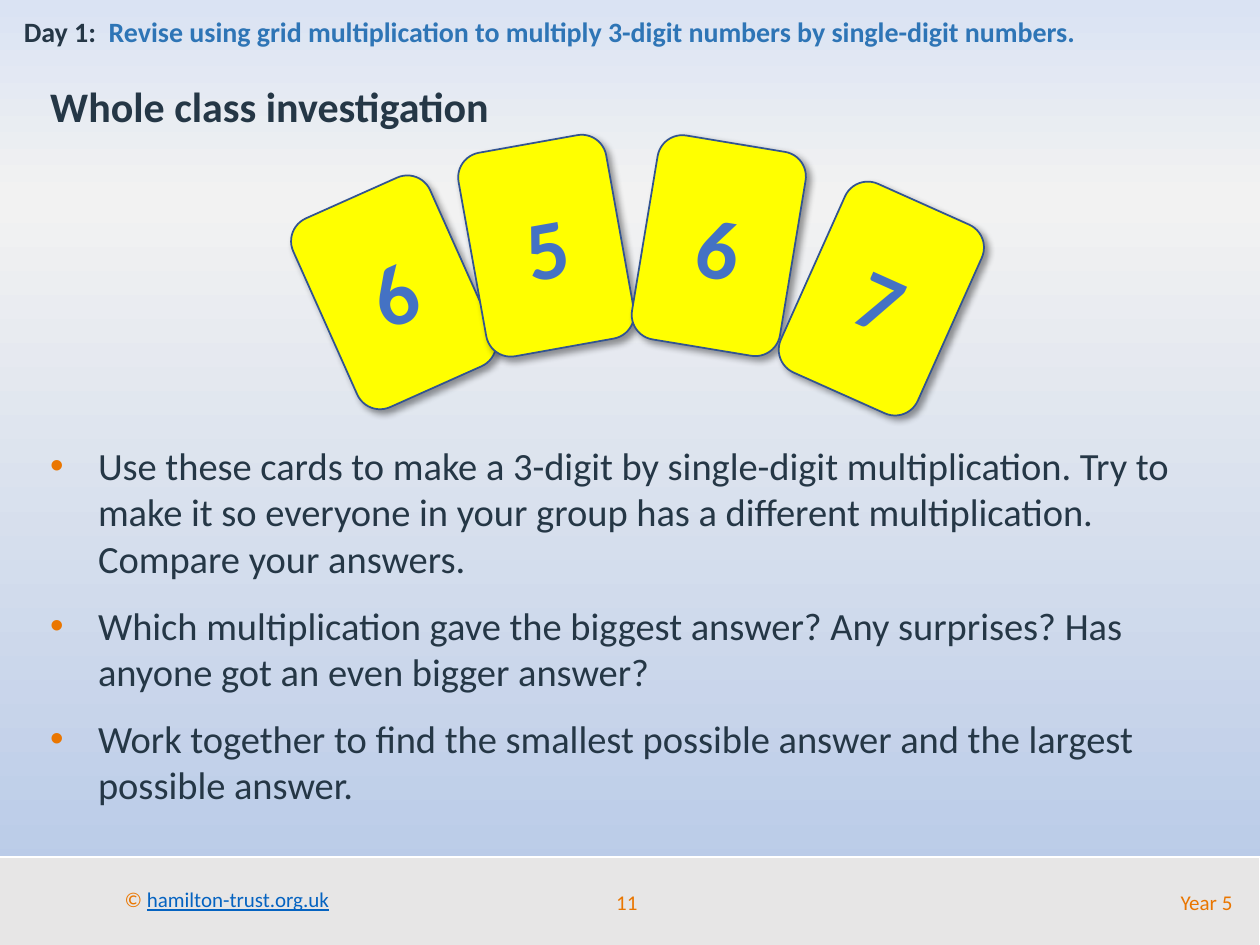
from copy import deepcopy

from lxml.etree import SubElement
from pptx import Presentation
from pptx.dml.color import RGBColor
from pptx.enum.shapes import MSO_SHAPE as Shape
from pptx.enum.text import MSO_ANCHOR as Anchor, PP_ALIGN as Align
from pptx.oxml.ns import qn
from pptx.util import Inches, Pt

FONT = "Calibri"
COLOURS = {
    "sky": "DAE3F3",
    "mist": "F2F2F2",
    "dusk": "B4C7E7",
    "footer": "E7E6E6",
    "white": "FFFFFF",
    "orange": "EA7600",
    "link": "0563C1",
    "ink": "253746",
    "objective": "2E75B6",
    "card": "FFFF00",
    "card_edge": "325491",
    "digit": "4472C4",
    "shadow": "000000",
}
BACKGROUND = [(0, "sky"), (0.21, "mist"), (1, "dusk")]
CARD_SIZE = (1.19, 1.64)
CARDS = [
    ("6", 2.53, 1.5, 335.9),
    ("5", 3.74, 1.13, 349.8),
    ("6", 5.11, 1.13, 9.4),
    ("7", 6.4, 1.55, 24.1),
]
TASKS = [
    "Use these cards to make a 3-digit by single-digit multiplication. "
    "Try to make it so everyone in your group has a different multiplication. "
    "Compare your answers.",
    "Which multiplication gave the biggest answer? Any surprises? "
    "Has anyone got an even bigger answer?",
    "Work together to find the smallest possible answer and the largest possible answer.",
]


def colour(name):
    return RGBColor.from_string(COLOURS[name])


def add_span(para, text, size, tint, bold=False, underline=None):
    span = para.add_run()
    span.text = text
    font = span.font
    font.name = FONT
    font.size = Pt(size)
    font.bold = bold
    font.underline = underline
    font.color.rgb = colour(tint)


def add_text_box(page, bounds, anchor=Anchor.TOP, wrap=True):
    frame = page.shapes.add_textbox(*map(Inches, bounds)).text_frame
    frame.word_wrap = wrap
    frame.vertical_anchor = anchor
    return frame


def add_panel(page, kind, bounds, fill, line):
    panel = page.shapes.add_shape(kind, *map(Inches, bounds))
    panel.shadow.inherit = False
    panel.fill.solid()
    panel.fill.fore_color.rgb = colour(fill)
    panel.line.color.rgb = colour(line)
    panel.line.width = Pt(1)
    return panel


def paint_background(page):
    fill = page.background.fill
    fill.gradient()
    fill.gradient_angle = 270
    stop_list = page.element.find(".//" + qn("a:gsLst"))
    stop_list.append(deepcopy(stop_list[0]))
    for stop, (position, tint) in zip(fill.gradient_stops, BACKGROUND):
        stop.position = position
        stop.color.rgb = colour(tint)


def add_footer(page, bounds):
    left, top, width, height = bounds
    add_panel(page, Shape.RECTANGLE, bounds, "footer", "white")
    credit = add_text_box(page, (left + 0.95, top + 0.19, 1.84, 0.3), wrap=False).paragraphs[0]
    add_span(credit, "© ", 12, "orange")
    add_span(credit, "hamilton-trust.org.uk", 12, "link", underline=True)
    labels = [("11", 4.58, 0.79, Align.CENTER), ("Year 5", 6.5, 3.38, Align.RIGHT)]
    for text, label_left, label_width, align in labels:
        box = (label_left, top + 0.16, label_width, 0.4)
        para = add_text_box(page, box, Anchor.MIDDLE).paragraphs[0]
        para.alignment = align
        add_span(para, text, 12, "orange")


def add_objective(page, bounds):
    para = add_text_box(page, bounds).paragraphs[0]
    add_span(para, "Day 1:  ", 16, "ink", bold=True)
    add_span(
        para,
        "Revise using grid multiplication to multiply 3-digit numbers by single-digit numbers.",
        16, "objective", bold=True,
    )


def add_heading(page, bounds):
    para = add_text_box(page, bounds).paragraphs[0]
    add_span(para, "Whole class investigation", 24, "ink", bold=True)


def add_bullet(para):
    properties = para._p.get_or_add_pPr()
    properties.set("marL", str(Inches(0.38)))
    properties.set("indent", str(-Inches(0.38)))
    tint = SubElement(properties, qn("a:buClr"))
    SubElement(tint, qn("a:srgbClr"), val=COLOURS["orange"])
    SubElement(properties, qn("a:buFont"), typeface="Arial")
    SubElement(properties, qn("a:buChar"), char="•")


def add_tasks(page, bounds):
    frame = add_text_box(page, bounds)
    for index, task in enumerate(TASKS):
        para = frame.add_paragraph() if index else frame.paragraphs[0]
        add_bullet(para)
        para.space_after = Pt(12)
        add_span(para, task, 22, "ink")


def add_card_shadow(card):
    effects = card._element.spPr.find(qn("a:effectLst"))
    shadow = SubElement(
        effects, qn("a:outerShdw"),
        blurRad=str(Pt(4)), dist=str(Pt(3)), dir=str(45 * 60000),
        algn="tl", rotWithShape="0",
    )
    tint = SubElement(shadow, qn("a:srgbClr"), val=COLOURS["shadow"])
    SubElement(tint, qn("a:alpha"), val="40000")


def add_card(page, bounds, digit, rotation):
    card = add_panel(page, Shape.ROUNDED_RECTANGLE, bounds, "card", "card_edge")
    card.rotation = rotation
    add_card_shadow(card)
    frame = card.text_frame
    frame.vertical_anchor = Anchor.MIDDLE
    para = frame.paragraphs[0]
    para.alignment = Align.CENTER
    add_span(para, digit, 48, "digit", bold=True)


def main():
    deck = Presentation()
    deck.slide_width = Inches(10)
    deck.slide_height = Inches(7.5)
    page = deck.slides.add_slide(deck.slide_layouts[6])
    paint_background(page)
    add_footer(page, (-0.06, 6.8, 10.06, 0.72))
    add_objective(page, (0.09, 0.07, 9.25, 0.37))
    add_heading(page, (0.3, 0.59, 9.25, 0.5))
    add_tasks(page, (0.3, 3.46, 9.25, 3.02))
    for digit, left, top, rotation in CARDS:
        add_card(page, (left, top, *CARD_SIZE), digit, rotation)
    deck.save("out.pptx")


if __name__ == "__main__":
    main()
